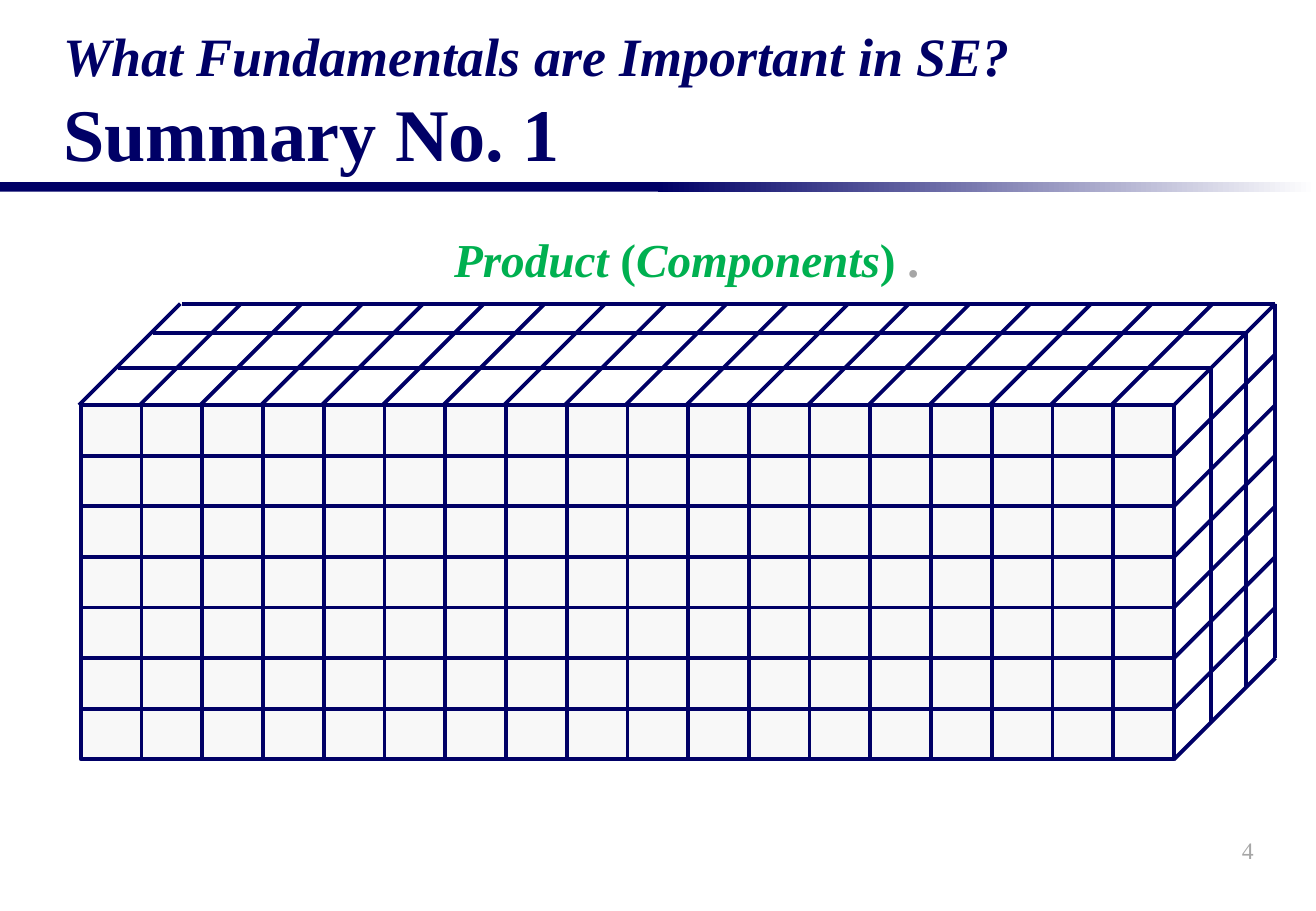
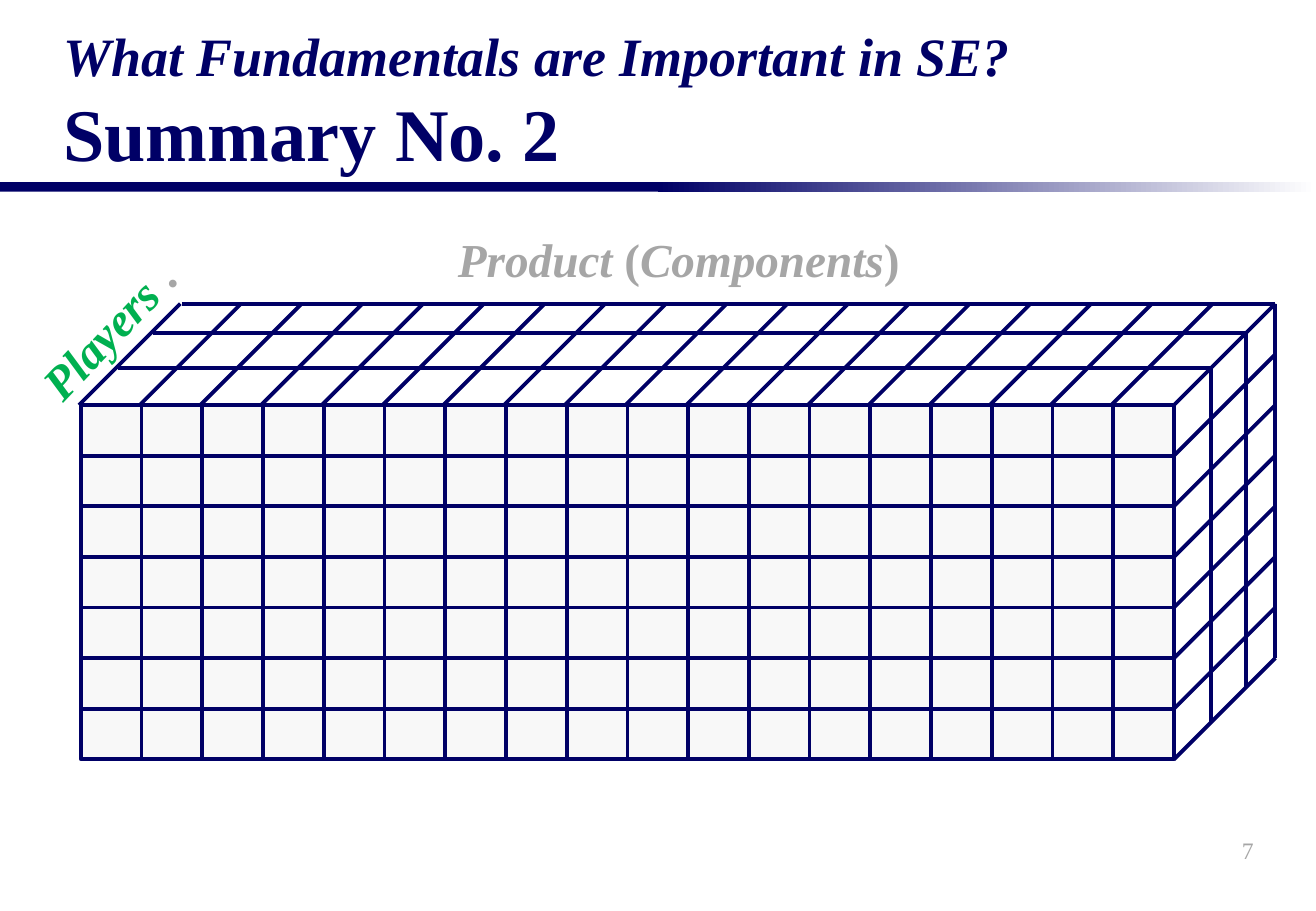
from dataclasses import dataclass
from typing import NamedTuple

from lxml.etree import SubElement
from pptx import Presentation
from pptx.dml.color import RGBColor
from pptx.enum.shapes import MSO_CONNECTOR, MSO_SHAPE
from pptx.enum.text import MSO_ANCHOR, MSO_AUTO_SIZE, PP_ALIGN
from pptx.oxml.ns import qn
from pptx.presentation import Presentation as Deck
from pptx.shapes.group import GroupShape
from pptx.slide import Slide, SlideLayout
from pptx.util import Cm, Pt

NAVY = RGBColor(0x00, 0x00, 0x66)
WHITE = RGBColor(0xFF, 0xFF, 0xFF)
PALE = RGBColor(0xF8, 0xF8, 0xF8)
GREEN = RGBColor(0x00, 0xB0, 0x50)
GREY = RGBColor(0xA6, 0xA6, 0xA6)
FONT = "Times New Roman"

SLIDE_W, SLIDE_H = 27.52, 19.05
BAND_TOP, BAND_H = 3.81, 0.2

COLS, ROWS = 18, 7
LEFT, TOP = 1.69, 8.47
FRONT_W, FRONT_H = 22.86, 7.41
CELL_W, CELL_H = FRONT_W / COLS, FRONT_H / ROWS
RIGHT, BOTTOM = LEFT + FRONT_W, TOP + FRONT_H
LAYERS = (0.78, 1.5, 2.12)
DEPTH = LAYERS[-1]
SLANT_LEFT = LEFT - 0.04


class Span(NamedTuple):
    text: str
    color: RGBColor
    italic: bool = False


@dataclass(frozen=True)
class Label:
    left: float
    top: float
    width: float
    height: float
    spans: tuple[Span, ...]
    rotation: float = 0
    size: int = 28
    bold: bool = True
    align: PP_ALIGN = PP_ALIGN.CENTER
    anchor: MSO_ANCHOR = MSO_ANCHOR.TOP
    fit: MSO_AUTO_SIZE = MSO_AUTO_SIZE.SHAPE_TO_FIT_TEXT


@dataclass(frozen=True)
class Summary:
    title: str
    number: str
    labels: tuple[Label, ...]


def product_spans(color: RGBColor) -> tuple[Span, ...]:
    return (
        Span("Product ", color, True),
        Span("(", color),
        Span("Components", color, True),
        Span(")", color),
    )


SUMMARIES = (
    Summary("Summary No. 1", "4", (
        Label(9.19, 4.7, 10.34, 1.45, product_spans(GREEN) + (Span(" ", GREEN), Span(".", GREY))),
    )),
    Summary("Summary No. 2", "7", (
        Label(0.23, 6.17, 4.06, 1.45, (Span("Players", GREEN, True), Span(" .", GREY)), 313.5),
        Label(9.32, 4.7, 9.75, 1.45, product_spans(GREY)),
    )),
)


def page_label(number: str) -> Label:
    return Label(20.73, 17.15, 5.74, 1.27, (Span(number, GREY),), size=14, bold=False,
                 align=PP_ALIGN.RIGHT, anchor=MSO_ANCHOR.MIDDLE, fit=MSO_AUTO_SIZE.NONE)


def set_up_layout(layout: SlideLayout) -> None:
    title = layout.placeholders[0]
    title.left, title.top, title.width, title.height = Cm(1.07), Cm(0.74), Cm(25.4), Cm(3.07)


def add_band(prs: Deck, s: Slide) -> None:
    half = SLIDE_W / 2
    for i in range(2):
        sp = s.shapes.add_shape(MSO_SHAPE.RECTANGLE, Cm(i * half), Cm(BAND_TOP), Cm(half), Cm(BAND_H))
        sp.shadow.inherit = False
        sp.line.fill.background()
        if i == 0:
            sp.fill.solid()
            sp.fill.fore_color.rgb = NAVY
        else:
            sp.fill.gradient()
            sp.fill.gradient_angle = 0
            for stop, color, position in zip(sp.fill.gradient_stops, (NAVY, WHITE), (0, 1)):
                stop.color.rgb = color
                stop.position = position
        prs.slide_master.shapes.element.append(sp.element)


def add_title(s: Slide, text: str) -> None:
    tf = s.shapes.title.text_frame
    tf.auto_size = MSO_AUTO_SIZE.NONE
    tf.vertical_anchor = MSO_ANCHOR.BOTTOM
    p = tf.paragraphs[0]
    p.alignment = PP_ALIGN.LEFT
    p.font.name, p.font.bold = FONT, True
    p.font.color.rgb = NAVY
    r = p.add_run()
    r.text = "What Fundamentals are Important in SE?"
    r.font.size, r.font.italic = Pt(32), True
    p.add_line_break()
    r = p.add_run()
    r.text = text
    r.font.size = Pt(44)


def add_label(s: Slide, label: Label) -> None:
    sp = s.shapes.add_textbox(Cm(label.left), Cm(label.top), Cm(label.width), Cm(label.height))
    sp.rotation = label.rotation
    tf = sp.text_frame
    tf.word_wrap = False
    tf.auto_size = label.fit
    tf.vertical_anchor = label.anchor
    p = tf.paragraphs[0]
    p.alignment = label.align
    p.font.name, p.font.size, p.font.bold = FONT, Pt(label.size), label.bold
    for span in label.spans:
        r = p.add_run()
        r.text = span.text
        r.font.italic = span.italic
        r.font.color.rgb = span.color


def add_line(group: GroupShape, x1: float, y1: float, x2: float, y2: float) -> None:
    line = group.shapes.add_connector(MSO_CONNECTOR.STRAIGHT, Cm(x1), Cm(y1), Cm(x2), Cm(y2))
    line.line.color.rgb = NAVY
    line.line.width = Pt(2.25)
    SubElement(line.element.spPr, qn("a:effectLst"))


def add_cuboid(s: Slide) -> None:
    group = s.shapes.add_group_shape()
    front = group.shapes.add_shape(MSO_SHAPE.RECTANGLE, Cm(LEFT), Cm(TOP), Cm(FRONT_W), Cm(FRONT_H))
    front.shadow.inherit = False
    front.fill.solid()
    front.fill.fore_color.rgb = PALE
    front.line.color.rgb = NAVY
    front.line.width = Pt(2.25)
    for row in range(ROWS + 1):
        y = TOP + row * CELL_H
        add_line(group, LEFT, y, RIGHT, y)
        add_line(group, RIGHT, y, RIGHT + DEPTH, y - DEPTH)
    for col in range(1, COLS):
        x = LEFT + col * CELL_W
        add_line(group, x, TOP, x, BOTTOM)
    for col in range(COLS):
        x = SLANT_LEFT + col * CELL_W
        add_line(group, x, TOP, x + DEPTH, TOP - DEPTH)
    for d in LAYERS:
        add_line(group, LEFT + d, TOP - d, RIGHT + d, TOP - d)
        add_line(group, RIGHT + d, TOP - d, RIGHT + d, BOTTOM - d)


def main() -> None:
    prs = Presentation()
    prs.slide_width, prs.slide_height = Cm(SLIDE_W), Cm(SLIDE_H)
    layout = prs.slide_layouts[5]
    set_up_layout(layout)
    for summary in SUMMARIES:
        s = prs.slides.add_slide(layout)
        add_title(s, summary.title)
        for label in (page_label(summary.number), *summary.labels):
            add_label(s, label)
        add_cuboid(s)
    add_band(prs, prs.slides[0])
    prs.save("out.pptx")


if __name__ == "__main__":
    main()
